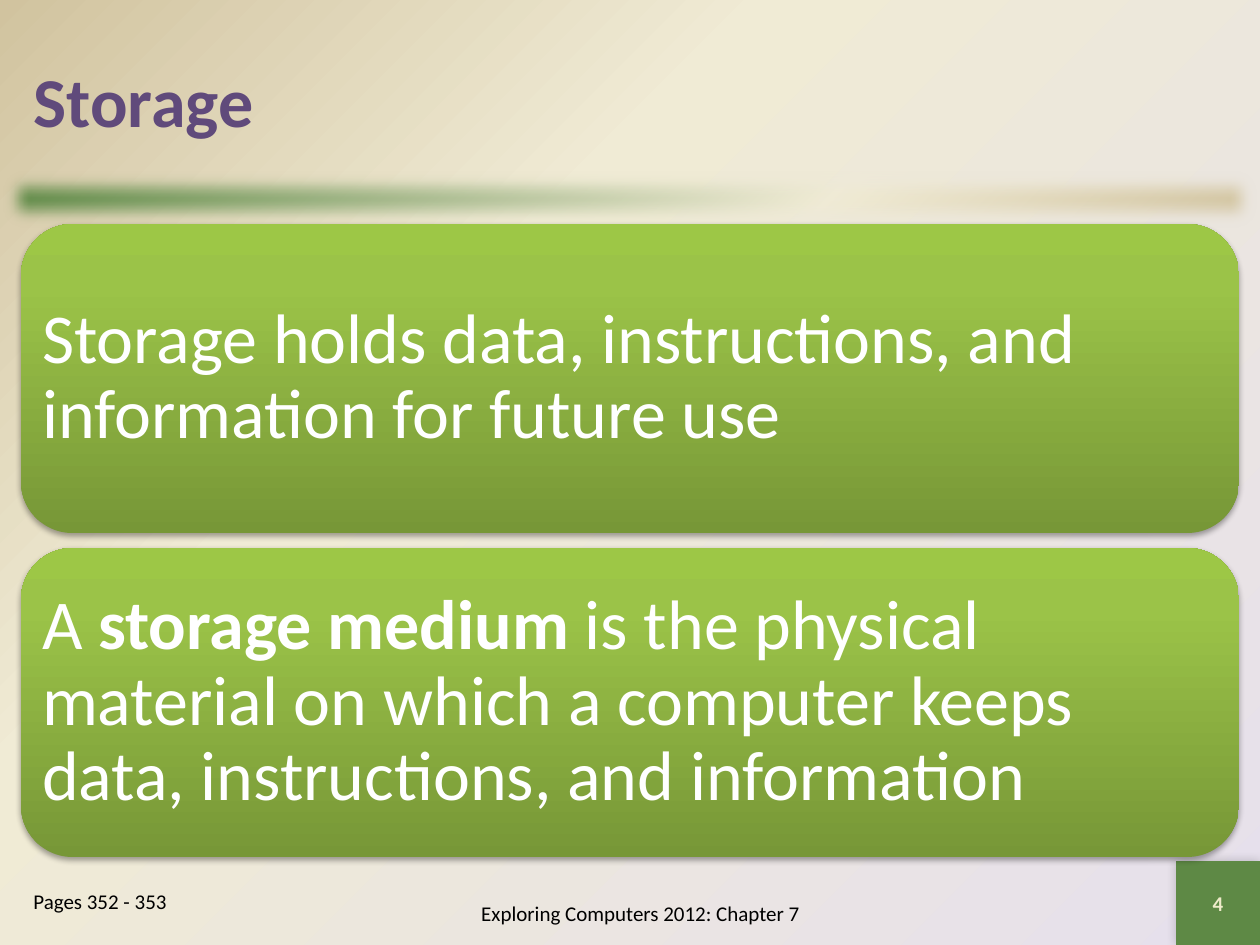
"""Build the Storage slide with two green cards."""
import pptx
import pptx.util
import pptx.dml.color
import pptx.enum.shapes
import pptx.enum.text
import pptx.oxml
import lxml.etree

NS = 'xmlns:a="http://schemas.openxmlformats.org/drawingml/2006/main"'
SCALE = 914400 / 126
KIND = pptx.enum.shapes.MSO_SHAPE
ALIGN = pptx.enum.text.PP_ALIGN
ANCHOR = pptx.enum.text.MSO_ANCHOR
SAND = [(0, "5E8945"), (65, "F0EBD5"), (100, "D1C39F")]
LEAF = [(0, "779737"), (80, "9BC348"), (100, "9DC746")]
DUSK = [(0, "E6E0EC"), (65, "F0EBD5"), (100, "D1C39F")]


def blend(stops, shade):
    """Return a gradient fill element."""
    marks = "".join(f'<a:gs pos="{pos * 1000}"><a:srgbClr val="{tint}"/></a:gs>' for pos, tint in stops)
    return pptx.oxml.parse_xml(f'<a:gradFill {NS} rotWithShape="1"><a:gsLst>{marks}</a:gsLst>{shade}</a:gradFill>')


def write(shape, runs, size, tint, anchor, align=ALIGN.LEFT, **form):
    """Fill a shape with one paragraph of (text, bold) runs."""
    frame = shape.text_frame
    frame.word_wrap = True
    frame.vertical_anchor = anchor
    para = frame.paragraphs[0]
    para.alignment = align
    for name, value in form.items():
        setattr(para, name, value)
    look = {"name": "Calibri", "size": pptx.util.Pt(size)}
    for text, bold in runs:
        run = para.add_run()
        run.text = text
        run.font.bold = bold
        run.font.color.rgb = pptx.dml.color.RGBColor.from_string(tint)
        for name, value in look.items():
            setattr(run.font, name, value)


deck = pptx.Presentation()
deck.slide_width, deck.slide_height = [round(n * SCALE) for n in (1260, 945)]
slide = deck.slides.add_slide(deck.slide_layouts[5])
shapes = slide.shapes

slide.background.fill.solid()
back = slide.background._element.find(".//{*}bgPr")
back.replace(back[0], blend(DUSK, '<a:path path="circle"><a:fillToRect l="100000" t="100000"/></a:path>'))

items = {}
plan = [
    ("bar", KIND.RECTANGLE, (0, 168, 1260, 63), (SAND, 45),
     '<a:softEdge rad="127000"/>'),
    ("tab", KIND.RECTANGLE, (1176, 861, 84, 84), ([(0, "5E8945")], 0),
     '<a:outerShdw blurRad="76200" dir="13500000"><a:srgbClr val="000000"><a:alpha val="20000"/></a:srgbClr></a:outerShdw>'),
]
drop = '<a:outerShdw blurRad="39370" dist="22860" dir="5400000"><a:srgbClr val="000000"><a:alpha val="35000"/></a:srgbClr></a:outerShdw>'
for row, name in enumerate(("use", "medium")):
    plan.append((name, KIND.ROUNDED_RECTANGLE, (21, 224 + 324 * row, 1218, 309), (LEAF, 270), drop))

for name, kind, box, (stops, angle), effect in plan:
    shape = shapes.add_shape(kind, *[round(n * SCALE) for n in box])
    shape.line.fill.background()
    if name == "tab":
        shape.fill.solid()
        shape.fill.fore_color.rgb = pptx.dml.color.RGBColor.from_string(stops[0][1])
    else:
        shape.fill.gradient()
        props = shape._element.spPr
        props.replace(props.find("{*}gradFill"), blend(stops, f'<a:lin ang="{angle * 60000}" scaled="1"/>'))
    shape.shadow.inherit = False
    shape._element.spPr.find("{*}effectLst").append(
        lxml.etree.fromstring(effect.replace(" ", f" {NS} ", 1)))
    items[name] = shape

title = shapes.title
for name, value in {"left": 21, "top": 21, "width": 1218, "height": 158}.items():
    setattr(title, name, round(value * SCALE))
write(title, [("Storage", True)], 40, "604A7B", ANCHOR.MIDDLE)

cards = {
    "use": [("Storage holds data, instructions, and information for future use", False)],
    "medium": [("A ", False), ("storage medium", True),
               (" is the physical material on which a computer keeps data, instructions, and information", False)],
}
for name, runs in cards.items():
    for side, inset in {"left": 6, "top": 6, "right": 6, "bottom": 6}.items():
        setattr(items[name].text_frame, f"margin_{side}", round(inset * SCALE))
    write(items[name], runs, 40, "FFFFFF", ANCHOR.MIDDLE, line_spacing=0.9)

write(items["tab"], [("4", True)], 12, "EEEBCA", ANCHOR.MIDDLE, ALIGN.CENTER)
feet = [
    ("Exploring Computers 2012: Chapter 7", (378, 882, 525, 63), ANCHOR.MIDDLE, ALIGN.CENTER, 0),
    ("Pages 352 - 353", (21, 882, 231, 63), ANCHOR.TOP, ALIGN.LEFT, 2.4),
]
for text, box, anchor, align, gap in feet:
    foot = shapes.add_textbox(*[round(n * SCALE) for n in box])
    write(foot, [(text, False)], 12, "000000", anchor, align, space_before=pptx.util.Pt(gap))

deck.save("out.pptx")
